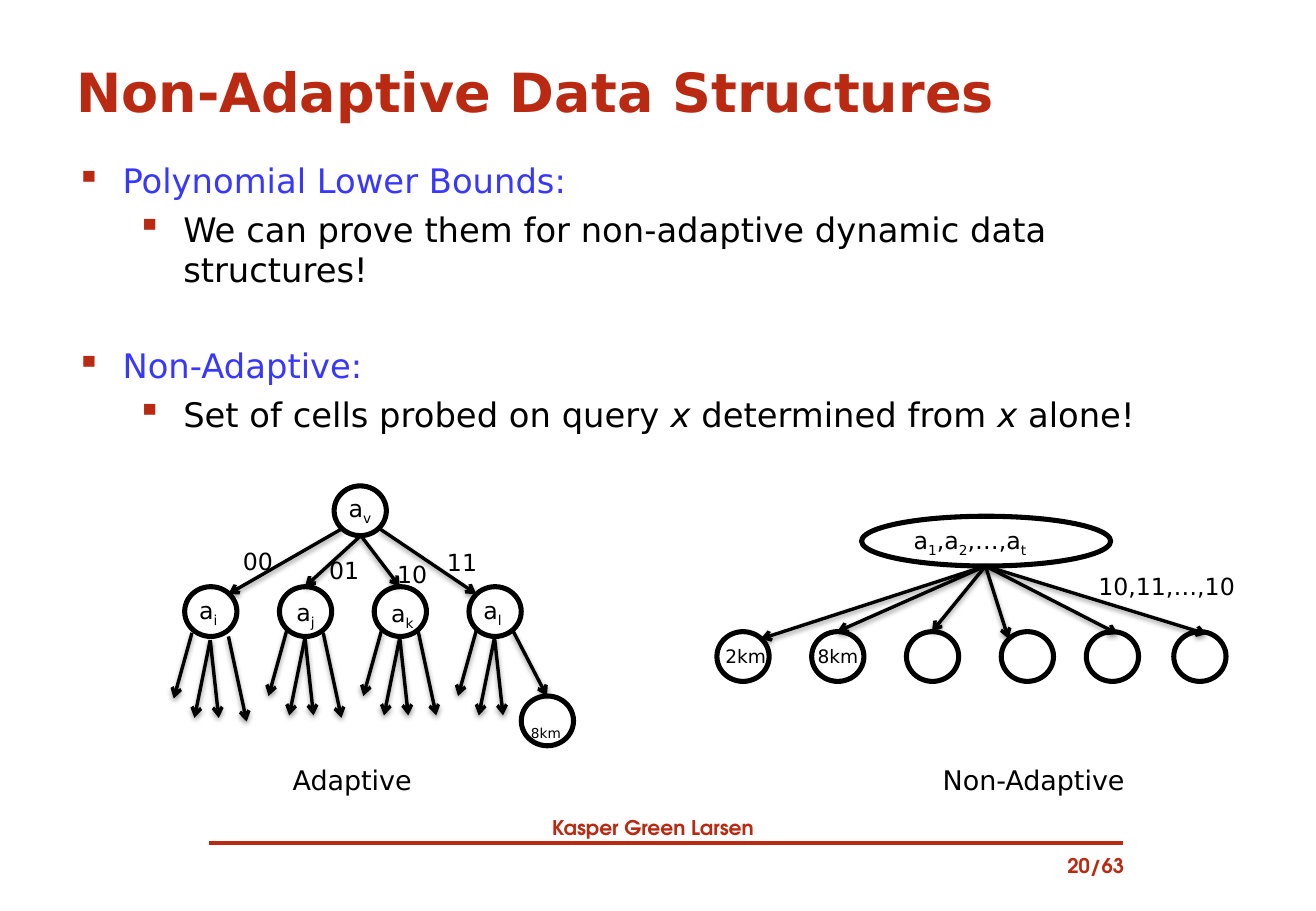
from dataclasses import dataclass

from lxml.etree import SubElement
from pptx import Presentation
from pptx.dml.color import RGBColor
from pptx.enum.shapes import MSO_CONNECTOR, MSO_SHAPE
from pptx.enum.text import MSO_ANCHOR, PP_ALIGN
from pptx.oxml.ns import qn
from pptx.util import Inches, Pt


@dataclass(frozen=True)
class Theme:
    """Colours, fonts and sizes of the slide."""
    red: RGBColor = RGBColor(0xBA, 0x2A, 0x12)
    blue: RGBColor = RGBColor(0x37, 0x37, 0xFF)
    black: RGBColor = RGBColor(0, 0, 0)
    text_font: str = "DejaVu Sans"
    footer_font: str = "TeX Gyre Adventor"
    title_size: int = 32
    body_size: int = 20
    caption_size: int = 16
    label_size: int = 14
    footer_size: int = 12
    distance_size: int = 11
    outline: int = 3
    arrow: int = 2
    rule: float = 2.25


THEME = Theme()
NODE_WIDTH, NODE_HEIGHT, NODE_PITCH = 0.43, 0.41, 0.78


def text_format(size, color=THEME.black, name=THEME.text_font, bold=False):
    """Return the format values of a kind of text."""
    return {"size": Pt(size), "name": name, "bold": bold, "color": color}


def write_parts(paragraph, parts, style, accent="subscript"):
    """Write runs in which every second part carries the accent."""
    for index, part in enumerate(parts):
        if not part:
            continue
        run = paragraph.add_run()
        run.text = part
        for attribute, value in style.items():
            if attribute == "color":
                run.font.color.rgb = value
            else:
                setattr(run.font, attribute, value)
        if index % 2 and accent == "italic":
            run.font.italic = True
        elif index % 2:
            run.font._element.set("baseline", "-25000")


def add_frame(slide, left, top, width, height, anchor=MSO_ANCHOR.TOP):
    """Add a wrapping text box and return its text frame."""
    frame = slide.shapes.add_textbox(
        Inches(left), Inches(top), Inches(width), Inches(height)).text_frame
    frame.word_wrap = True
    frame.vertical_anchor = anchor
    return frame


def add_label(slide, box, parts, style, align=PP_ALIGN.LEFT, anchor=MSO_ANCHOR.TOP):
    """Add one line of text in a box."""
    paragraph = add_frame(slide, *box, anchor).paragraphs[0]
    paragraph.alignment = align
    write_parts(paragraph, parts, style)


def add_bullet(paragraph, level, parts, color, space_before):
    """Write a body paragraph with a red square bullet."""
    properties = paragraph._p.get_or_add_pPr()
    properties.set("marL", str(Inches(0.38 + 0.5 * level)))
    properties.set("indent", str(Inches(-0.38)))
    paragraph.level = level
    paragraph.space_before = Pt(space_before)
    bullet_color = SubElement(properties, qn("a:buClr"))
    SubElement(bullet_color, qn("a:srgbClr"), val=str(THEME.red))
    SubElement(properties, qn("a:buChar"), char="▪")
    write_parts(paragraph, parts, text_format(THEME.body_size, color), "italic")


def add_node(slide, left, top, width=NODE_WIDTH):
    """Add an unfilled ellipse with a heavy black outline."""
    node = slide.shapes.add_shape(
        MSO_SHAPE.OVAL, Inches(left), Inches(top), Inches(width), Inches(NODE_HEIGHT))
    node.shadow.inherit = False
    node.fill.background()
    node.line.color.rgb = THEME.black
    node.line.width = Pt(THEME.outline)


def add_line(slide, start, end, color, width):
    """Add a straight line and return it with its empty effect list."""
    line = slide.shapes.add_connector(
        MSO_CONNECTOR.STRAIGHT, *(Inches(value) for value in (*start, *end)))
    line.line.color.rgb = color
    line.line.width = Pt(width)
    return line, SubElement(line._element.spPr, qn("a:effectLst"))


def add_arrow(slide, start, end):
    """Add a black arrow with a soft shadow below it."""
    arrow, effects = add_line(slide, start, end, THEME.black, THEME.arrow)
    SubElement(arrow.line._get_or_add_ln(), qn("a:tailEnd"), type="arrow")
    shadow = SubElement(effects, qn("a:outerShdw"), blurRad=str(Pt(3.1)),
                        dist=str(Pt(1.6)), dir="5400000", rotWithShape="0")
    shadow_color = SubElement(shadow, qn("a:srgbClr"), val=str(THEME.black))
    SubElement(shadow_color, qn("a:alpha"), val="38000")


def add_body(slide):
    """Add the bulleted statements."""
    frame = add_frame(slide, 0.53, 1.27, 9.68, 5.2)
    statements = (
        (0, ("Polynomial Lower Bounds:",), THEME.blue, 0),
        (1, ("We can prove them for non-adaptive dynamic data structures!",),
         THEME.black, 4.6),
        (0, ("Non-Adaptive:",), THEME.blue, 33),
        (1, ("Set of cells probed on query ", "x ", "determined from ", "x ", "alone!"),
         THEME.black, 4.6),
    )
    for index, statement in enumerate(statements):
        paragraph = frame.add_paragraph() if index else frame.paragraphs[0]
        add_bullet(paragraph, *statement)


def add_probes(slide, index, left, top):
    """Add the four arrows that leave a node of the adaptive tree."""
    drop = 0.02 if index == 0 else 0
    outer_drop = (0.05, 0.02, 0, 0)[index]
    outer_end = (0.64, 0.9) if index == 3 else (0.51, 1.06)
    for start, end, shift in (
        ((0.06, 0.36), (-0.09, 0.9), drop),
        ((0.21, 0.42), (0.08, 1.06), drop),
        ((0.21, 0.42), (0.28, 1.06), drop),
        ((0.36, 0.36), outer_end, outer_drop),
    ):
        add_arrow(slide, (left + start[0], top + start[1] + shift),
                  (left + end[0], top + end[1] + shift))


def add_adaptive_tree(slide):
    """Draw the tree in which each probe depends on the last answer."""
    label = text_format(THEME.label_size)
    add_node(slide, 2.75, 4)
    add_label(slide, (2.77, 4.02, 0.48, 0.34), ("a", "v"), label)
    branches = (
        ("i", (1.54, 4.86), "00", (1.9, 4.45), (2.82, 4.35), (1.88, 4.89)),
        ("j", (2.34, 4.87), "01", (2.61, 4.53), (2.97, 4.41), (2.51, 4.83)),
        ("k", (3.12, 4.88), "10", (3.17, 4.56), (2.97, 4.41), (3.29, 4.83)),
        ("l", (3.88, 4.86), "11", (3.58, 4.46), (3.12, 4.35), (3.92, 4.89)),
    )
    for index, (cell, cell_at, answer, answer_at, start, end) in enumerate(branches):
        left, top = 1.52 + index * NODE_PITCH, 4.83
        add_node(slide, left, top)
        add_arrow(slide, start, end)
        add_probes(slide, index, left, top)
        add_label(slide, (*cell_at, 0.48, 0.34), ("a", cell), label)
        add_label(slide, (*answer_at, 0.48, 0.34), (answer,), label)
    add_node(slide, 4.29, 5.73)
    add_label(slide, (4.27, 5.79, 0.59, 0.26), ("", "8km"), label)


def add_non_adaptive_tree(slide):
    """Draw the tree in which all probes are fixed at the root."""
    label = text_format(THEME.label_size)
    distance = text_format(THEME.distance_size)
    add_node(slide, 7.09, 4.25, 2.05)
    add_label(slide, (7.42, 4.28, 1.3, 0.34), ("a", "1", ",a", "2", ",…,a", "t"), label)
    lefts = [5.9 + index * NODE_PITCH for index in range(4)] + [8.94, 9.66]
    tips = ((6.26, 5.26), (6.89, 5.2), (7.67, 5.2), (8.3, 5.26), (9.2, 5.22), (9.93, 5.22))
    for left, tip in zip(lefts, tips):
        add_node(slide, left, 5.2)
        add_arrow(slide, (8.11, 4.66), tip)
    add_label(slide, (5.87, 5.26, 0.68, 0.29), ("2km",), distance)
    add_label(slide, (6.63, 5.26, 0.74, 0.29), ("8km",), distance)
    add_label(slide, (8.94, 4.66, 1.74, 0.34), ("10,11,…,10",), label)


def main():
    """Build the slide and save it."""
    deck = Presentation()
    deck.slide_width, deck.slide_height = Inches(10.83), Inches(7.5)
    slide = deck.slides.add_slide(deck.slide_layouts[6])
    footer = text_format(THEME.footer_size, THEME.red, THEME.footer_font, True)
    add_label(slide, (0.53, 6.66, 9.69, 0.3), ("Kasper Green Larsen",), footer,
              PP_ALIGN.CENTER)
    add_label(slide, (8.37, 6.98, 0.98, 0.3), ("20/63",), footer, PP_ALIGN.RIGHT)
    add_line(slide, (1.72, 6.94), (9.24, 6.94), THEME.red, THEME.rule)
    add_label(slide, (0.53, 0.36, 9.75, 0.77), ("Non-Adaptive Data Structures",),
              text_format(THEME.title_size, THEME.red, bold=True),
              anchor=MSO_ANCHOR.MIDDLE)
    add_body(slide)
    add_adaptive_tree(slide)
    add_non_adaptive_tree(slide)
    for left, caption in ((2.31, "Adaptive"), (7.66, "Non-Adaptive")):
        add_label(slide, (left, 6.24, 1.74, 0.37), (caption,),
                  text_format(THEME.caption_size))
    deck.save("out.pptx")


if __name__ == "__main__":
    main()
